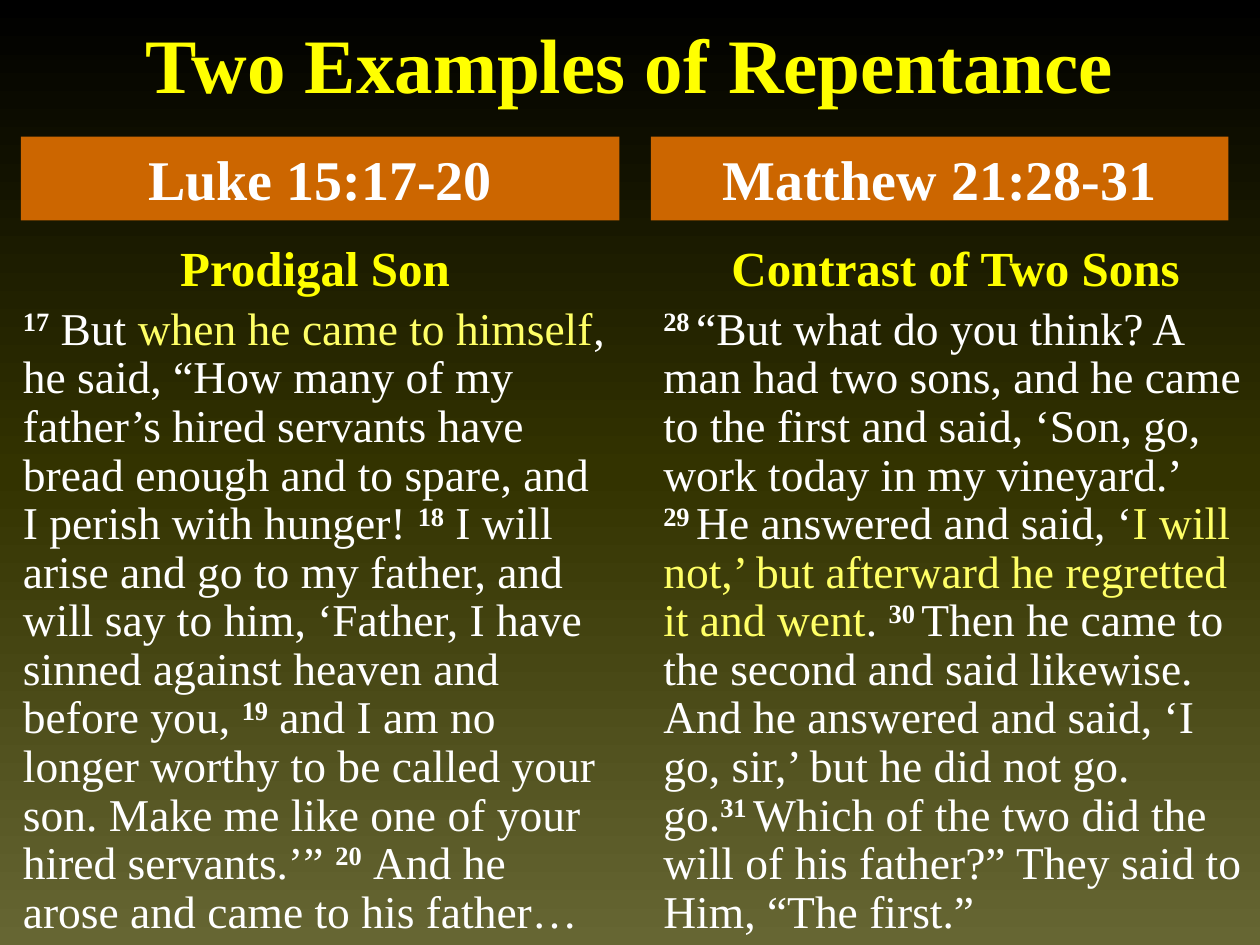
from copy import deepcopy

from pptx import Presentation
from pptx.dml.color import RGBColor
from pptx.enum.shapes import MSO_SHAPE
from pptx.enum.text import MSO_ANCHOR, PP_ALIGN
from pptx.util import Inches, Pt

YELLOW = RGBColor(0xFF, 0xFF, 0x00)
PALE_YELLOW = RGBColor(0xFF, 0xFF, 0x66)
WHITE = RGBColor(0xFF, 0xFF, 0xFF)
ORANGE = RGBColor(0xCC, 0x66, 0x00)
BACKGROUND = [
    (0, RGBColor(0x66, 0x66, 0x33)),
    (0.5, RGBColor(0x33, 0x33, 0x00)),
    (1, RGBColor(0x00, 0x00, 0x00)),
]

VERSE, PLAIN, KEY = "verse", "plain", "key"

LUKE = [
    (VERSE, "17"),
    (PLAIN, "\u00a0But "),
    (KEY, "when he came to himself"),
    (PLAIN, ", he said, “How many of my father’s hired servants have bread "
            "enough and to spare, and I perish with hunger! "),
    (VERSE, "18"),
    (PLAIN, "\u00a0I will arise and go to my father, and will say to him, "
            "‘Father, I have sinned against heaven and before you,\u00a0"),
    (VERSE, "19"),
    (PLAIN, "\u00a0and I am no longer worthy to be called your son. Make me "
            "like one of your hired servants.’” "),
    (VERSE, "20"),
    (PLAIN, "\u00a0And he arose and came to his father…"),
]
MATTHEW = [
    (VERSE, "28\u00a0"),
    (PLAIN, "“But what do you think? A man had two sons, and he came to the "
            "first and said, ‘Son, go, work today in my vineyard.’ "),
    (VERSE, "29\u00a0"),
    (PLAIN, "He answered and said, ‘"),
    (KEY, "I will not,’ but afterward he regretted it and went"),
    (PLAIN, ".\u00a0"),
    (VERSE, "30\u00a0"),
    (PLAIN, "Then he came to the second and said likewise. And he answered "
            "and said, ‘I go, sir,’ but he did not go. go."),
    (VERSE, "31\u00a0"),
    (PLAIN, "Which of the two did the will of\u00a0his\u00a0father?” "
            "They said to Him, “The first.”"),
]


class ScriptureSlide:
    font_name = "Times New Roman"
    columns, rows = 120, 90

    def __init__(self, presentation):
        self.cell_width = presentation.slide_width // self.columns
        self.cell_height = presentation.slide_height // self.rows
        self.slide = presentation.slides.add_slide(presentation.slide_layouts[6])

    def place(self, left, top, width, height):
        return (left * self.cell_width, top * self.cell_height,
                width * self.cell_width, height * self.cell_height)

    def background(self, colours):
        fill = self.slide.background.fill
        fill.gradient()
        fill.gradient_angle = 90
        first = fill.gradient_stops[0]._gs
        first.addnext(deepcopy(first))
        for stop, (position, colour) in zip(fill.gradient_stops, colours):
            stop.position = position
            stop.color.rgb = colour

    def style(self, font, size, colour, bold=True):
        font.name = self.font_name
        font.size = Pt(size)
        font.color.rgb = colour
        font.bold = bold

    def heading(self, text_frame, text, size, colour):
        text_frame.word_wrap = True
        text_frame.text = text
        paragraph = text_frame.paragraphs[0]
        paragraph.alignment = PP_ALIGN.CENTER
        self.style(paragraph.runs[0].font, size, colour)
        return paragraph

    def title(self, area, text):
        text_frame = self.slide.shapes.add_textbox(*self.place(*area)).text_frame
        text_frame.vertical_anchor = MSO_ANCHOR.MIDDLE
        self.heading(text_frame, text, 44, YELLOW)

    def banner(self, area, text):
        shape = self.slide.shapes.add_shape(MSO_SHAPE.RECTANGLE, *self.place(*area))
        shape.shadow.inherit = False
        shape.fill.solid()
        shape.fill.fore_color.rgb = ORANGE
        shape.line.fill.background()
        shape.text_frame.vertical_anchor = MSO_ANCHOR.MIDDLE
        self.heading(shape.text_frame, text, 32, WHITE)

    def passage(self, area, heading, pieces):
        text_frame = self.slide.shapes.add_textbox(*self.place(*area)).text_frame
        self.heading(text_frame, heading, 28, YELLOW).space_after = Pt(6)
        paragraph = text_frame.add_paragraph()
        paragraph.line_spacing = 0.89
        for kind, text in pieces:
            run = paragraph.add_run()
            run.text = text
            colour = PALE_YELLOW if kind == KEY else WHITE
            self.style(run.font, 26, colour, bold=kind == VERSE)
            if kind == VERSE:
                run._r.get_or_add_rPr().set("baseline", "30000")


def main():
    presentation = Presentation()
    presentation.slide_width = Inches(10)
    presentation.slide_height = Inches(7.5)
    page = ScriptureSlide(presentation)
    page.background(BACKGROUND)
    page.title((0, 0, 120, 12), "Two Examples of Repentance")
    page.passage((1, 22, 58, 68), "Prodigal Son", LUKE)
    page.passage((62, 22, 58, 68), "Contrast of Two Sons", MATTHEW)
    page.banner((2, 13, 57, 8), "Luke 15:17-20")
    page.banner((62, 13, 55, 8), "Matthew 21:28-31")
    presentation.save("out.pptx")


if __name__ == "__main__":
    main()
